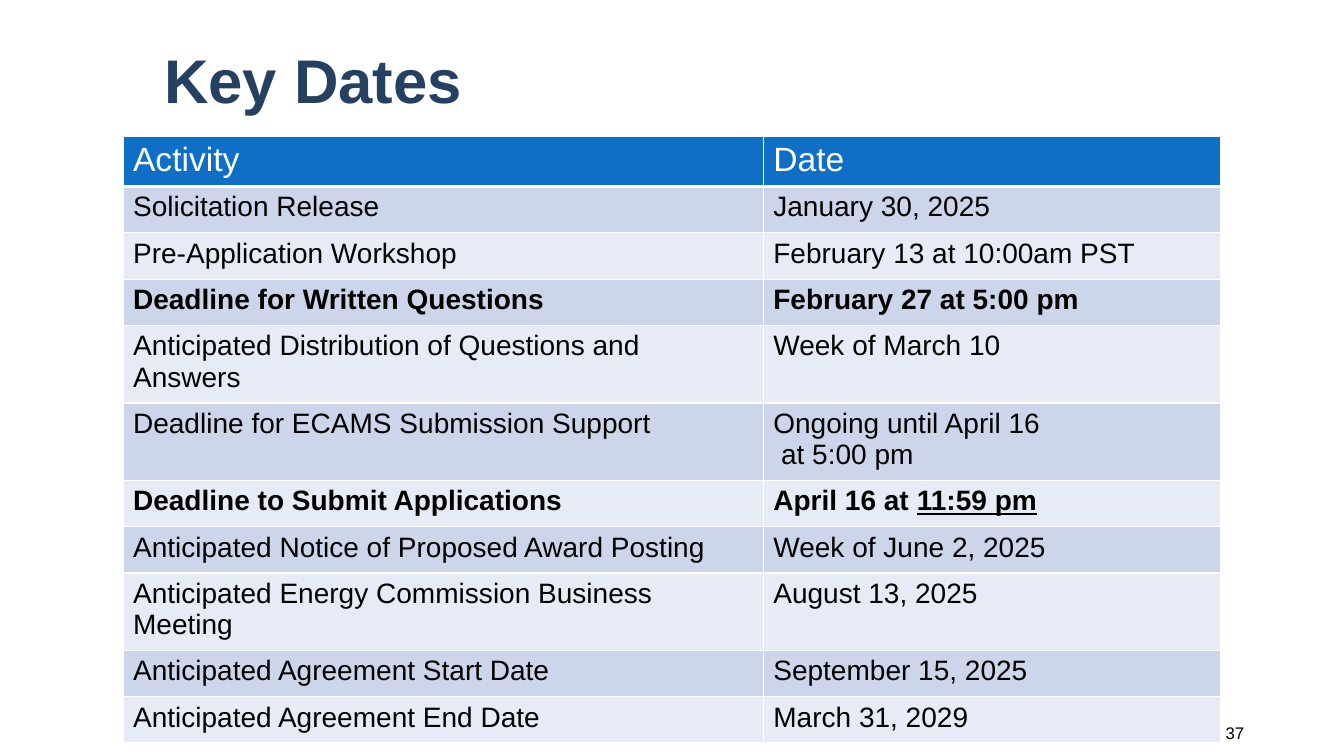
from lxml import etree
from pptx import Presentation
from pptx.dml.color import RGBColor
from pptx.enum.text import MSO_ANCHOR, PP_ALIGN
from pptx.oxml.ns import qn
from pptx.util import Inches, Pt

MIDDLE = MSO_ANCHOR.MIDDLE
LEFT, RIGHT = PP_ALIGN.LEFT, PP_ALIGN.RIGHT

FONT = "Arial"
NAVY = RGBColor(0x25, 0x40, 0x61)
BLUE = RGBColor(0x0F, 0x6F, 0xC6)
BAND_DARK = RGBColor(0xCC, 0xD5, 0xEA)
BAND_LIGHT = RGBColor(0xE7, 0xEB, 0xF5)
WHITE = RGBColor(0xFF, 0xFF, 0xFF)
BLACK = RGBColor(0x00, 0x00, 0x00)

COLUMN_WIDTHS = (6.35, 4.54)
ROW_HEIGHT = 0.46

HEADINGS = ("Activity", "Date")
# Activity, date, bold row, underlined end of the date
KEY_DATES = [
    ("Solicitation Release", "January 30, 2025", False, ""),
    ("Pre-Application Workshop", "February 13 at 10:00am PST", False, ""),
    ("Deadline for Written Questions", "February 27 at 5:00 pm", True, ""),
    ("Anticipated Distribution of Questions and Answers", "Week of March 10", False, ""),
    ("Deadline for ECAMS Submission Support", "Ongoing until April 16\n at 5:00 pm", False, ""),
    ("Deadline to Submit Applications", "April 16 at ", True, "11:59 pm"),
    ("Anticipated Notice of Proposed Award Posting", "Week of June 2, 2025", False, ""),
    ("Anticipated Energy Commission Business Meeting", "August 13, 2025", False, ""),
    ("Anticipated Agreement Start Date", "September 15, 2025", False, ""),
    ("Anticipated Agreement End Date", "March 31, 2029", False, ""),
]


def write_text(frame, text, size=20, color=BLACK, bold=False, align=LEFT,
               line_spacing=None, underlined=""):
    """Write one paragraph per line, then an underlined ending if given."""
    for index, line in enumerate(text.split("\n")):
        para = frame.add_paragraph() if index else frame.paragraphs[0]
        para.alignment = align
        if line_spacing:
            para.line_spacing = line_spacing
        para.add_run().text = line
    if underlined:
        span = para.add_run()
        span.text = underlined
        span.font.underline = True
    for para in frame.paragraphs:
        for span in para.runs:
            span.font.name = FONT
            span.font.size = Pt(size)
            span.font.bold = bold
            span.font.color.rgb = color


def add_text(page, left, top, width, height, text, **text_format):
    box = page.shapes.add_textbox(Inches(left), Inches(top), Inches(width), Inches(height))
    box.text_frame.word_wrap = True
    box.text_frame.vertical_anchor = MIDDLE
    write_text(box.text_frame, text, **text_format)


def set_borders(cell, top=1, bottom=1):
    properties = cell._tc.get_or_add_tcPr()
    for side, width in (("L", 1), ("R", 1), ("T", top), ("B", bottom)):
        line = etree.SubElement(properties, qn(f"a:ln{side}"), w=str(Pt(width)))
        fill = etree.SubElement(line, qn("a:solidFill"))
        etree.SubElement(fill, qn("a:srgbClr"), val=str(WHITE))


def fill_cell(cell, text, fill, top=1, bottom=1, **text_format):
    set_borders(cell, top, bottom)
    cell.fill.solid()
    cell.fill.fore_color.rgb = fill
    write_text(cell.text_frame, text, **text_format)


def add_dates_table(page, left, top):
    row_count = len(KEY_DATES) + 1
    table = page.shapes.add_table(
        row_count, len(HEADINGS), Inches(left), Inches(top),
        Inches(sum(COLUMN_WIDTHS)), Inches(ROW_HEIGHT * row_count)).table
    for column, width in zip(table.columns, COLUMN_WIDTHS):
        column.width = Inches(width)
    for row in table.rows:
        row.height = Inches(ROW_HEIGHT)

    # Header row
    for column, heading in enumerate(HEADINGS):
        fill_cell(table.cell(0, column), heading, BLUE, bottom=3, size=24, color=WHITE)

    # Banded rows, under the thick line of the header
    for row, (activity, date, bold, ending) in enumerate(KEY_DATES, start=1):
        fill = BAND_DARK if row % 2 else BAND_LIGHT
        top_width = 3 if row == 1 else 1
        fill_cell(table.cell(row, 0), activity, fill, top=top_width, bold=bold)
        fill_cell(table.cell(row, 1), date, fill, top=top_width, bold=bold, underlined=ending)


def main():
    deck = Presentation()
    deck.slide_width, deck.slide_height = Inches(13.33), Inches(7.5)
    page = deck.slides.add_slide(deck.slide_layouts[6])

    # Title
    add_text(page, 1.53, 0.26, 10.89, 1.14, "Key Dates",
             size=44, color=NAVY, bold=True, line_spacing=0.9)
    # Schedule
    add_dates_table(page, 1.22, 1.35)
    # Page number
    add_text(page, 10.47, 7.07, 1.97, 0.4, "37", size=12, align=RIGHT)

    deck.save("out.pptx")


if __name__ == "__main__":
    main()
